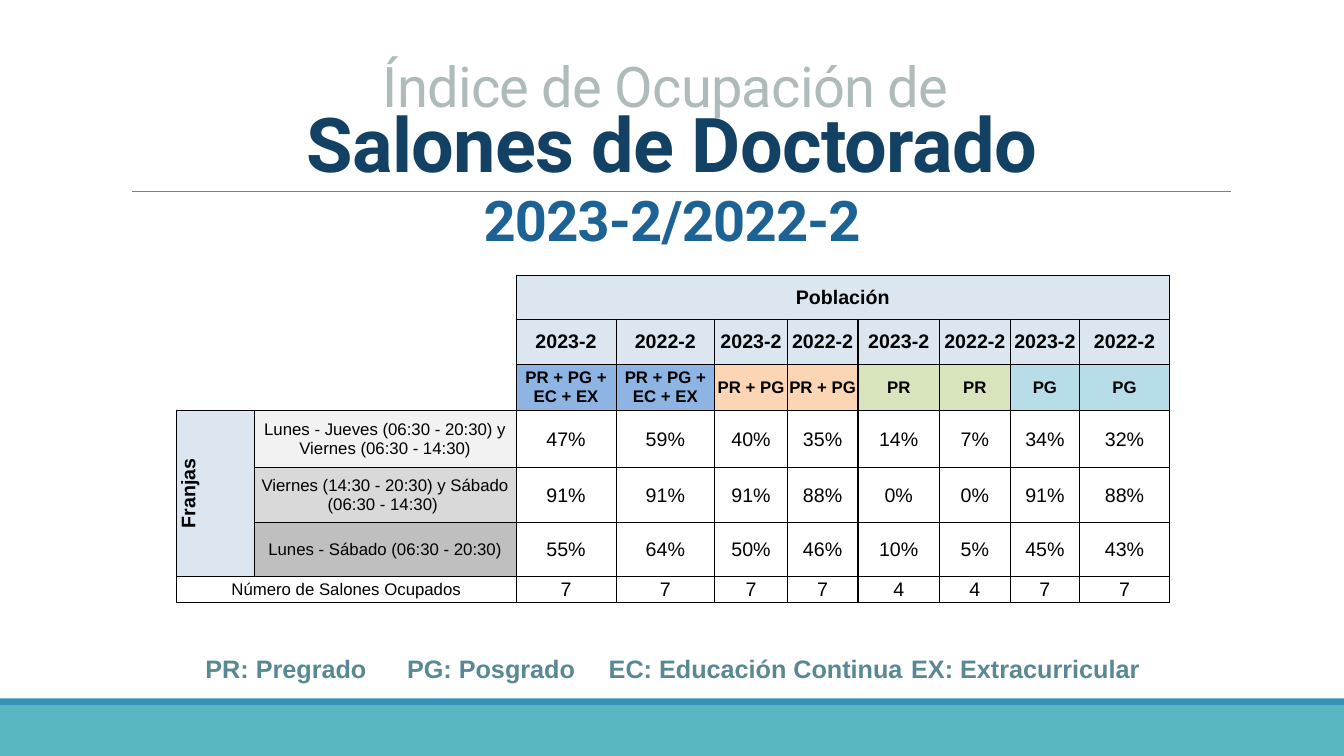
import typing

import lxml.etree
import pptx
import pptx.dml.color
import pptx.enum.shapes
import pptx.enum.text
import pptx.oxml.ns
import pptx.slide
import pptx.table
import pptx.text.text
import pptx.util

Inches = pptx.util.Inches
Pt = pptx.util.Pt
qn = pptx.oxml.ns.qn
Anchor = pptx.enum.text.MSO_ANCHOR
PALE = "DCE6F1"
WHITE = "FFFFFF"


class Column(typing.NamedTuple):
    width: float
    year: str
    group: str
    fill: str
    rates: tuple[int, int, int]
    rooms: int


class Slot(typing.NamedTuple):
    label: str
    fill: str


class Band(typing.NamedTuple):
    top: float
    height: float
    fill: str


BANDS = [Band(7, 0.5, "58B6C0"), Band(6.93, 0.07, "3494BA")]
COLUMNS = [
    Column(0.99, "2023-2", "PR + PG + EC + EX", "8DB4E2", (47, 91, 55), 7),
    Column(0.98, "2022-2", "PR + PG + EC + EX", "8DB4E2", (59, 91, 64), 7),
    Column(0.72, "2023-2", "PR + PG", "FCD5B4", (40, 91, 50), 7),
    Column(0.7, "2022-2", "PR + PG", "FCD5B4", (35, 88, 46), 7),
    Column(0.81, "2023-2", "PR", "D8E4BC", (14, 0, 10), 4),
    Column(0.7, "2022-2", "PR", "D8E4BC", (7, 0, 5), 4),
    Column(0.69, "2023-2", "PG", "B7DEE8", (34, 91, 45), 7),
    Column(0.89, "2022-2", "PG", "B7DEE8", (32, 88, 43), 7),
]
SLOTS = [
    Slot("Lunes - Jueves (06:30 - 20:30) y Viernes (06:30 - 14:30)", "F2F2F2"),
    Slot("Viernes (14:30 - 20:30) y Sábado (06:30 - 14:30) ", "D9D9D9"),
    Slot("Lunes - Sábado (06:30 - 20:30)", "BFBFBF"),
]
WIDTHS = [0.77, 2.6] + [col.width for col in COLUMNS]
HEIGHTS = [0.44, 0.44, 0.46, 0.57, 0.54, 0.54, 0.26]


def color(code: str) -> pptx.dml.color.RGBColor:
    return pptx.dml.color.RGBColor.from_string(code)


def write(frame: pptx.text.text.TextFrame, text: str, *, size: float = 14, font: str = "Arial",
          ink: str = "000000", bold: bool = False, gap: float = 0, line: float = 1) -> None:
    par = frame.paragraphs[0]
    if par.runs:
        par = frame.add_paragraph()
    par.alignment = pptx.enum.text.PP_ALIGN.CENTER
    par.line_spacing = line
    run = par.add_run()
    run.text = text
    run.font.size = Pt(size)
    run.font.name = font
    run.font.bold = bold
    run.font.color.rgb = color(ink)
    if gap:
        run.font._element.set("spc", str(round(gap * 100)))


def add_text(slide: pptx.slide.Slide, left: float, top: float, width: float,
             height: float) -> pptx.text.text.TextFrame:
    box = slide.shapes.add_textbox(Inches(left), Inches(top), Inches(width), Inches(height))
    box.text_frame.word_wrap = True
    return box.text_frame


def add_band(slide: pptx.slide.Slide, band: Band) -> None:
    shape = slide.shapes.add_shape(pptx.enum.shapes.MSO_SHAPE.RECTANGLE, 0, Inches(band.top),
                                   Inches(13.33), Inches(band.height))
    shape.shadow.inherit = False
    shape.fill.solid()
    shape.fill.fore_color.rgb = color(band.fill)
    shape.line.fill.background()


def add_rule(slide: pptx.slide.Slide) -> None:
    rule = slide.shapes.add_connector(pptx.enum.shapes.MSO_CONNECTOR.STRAIGHT, Inches(1.31),
                                      Inches(1.9), Inches(12.21), Inches(1.9))
    rule.line.color.rgb = color("808080")
    rule.line.width = Pt(0.5)
    lxml.etree.SubElement(rule._element.spPr, qn("a:effectLst"))


def edges(row: int, col: int, last: int) -> dict[str, float]:
    if row < 3 and col < 2:
        return {"L": 0, "R": col, "T": 0, "B": row == 2}
    return {
        "L": 0.5 if col % 2 else 1,
        "R": 1 if last % 2 else 0.5,
        "T": 1 if row < 2 or (row == 3 and col < 2) else 0.5,
        "B": 1 if row in (0, 6) else 0.5,
    }


def border(cell: pptx.table._Cell, sides: dict[str, float]) -> None:
    props = cell._tc.get_or_add_tcPr()
    for side, width in sides.items():
        line = lxml.etree.SubElement(props, qn(f"a:ln{side}"), w=str(Pt(width)))
        if width:
            fill = lxml.etree.SubElement(line, qn("a:solidFill"))
            lxml.etree.SubElement(fill, qn("a:srgbClr"), val="000000")
        else:
            lxml.etree.SubElement(line, qn("a:noFill"))


def put(grid: pptx.table.Table, row: int, col: int, text: str = "", fill: str = WHITE,
        **style: typing.Any) -> None:
    cell = grid.cell(row, col)
    cell.margin_left = cell.margin_right = cell.margin_top = Inches(0.01)
    cell.margin_bottom = 0
    cell.vertical_anchor = Anchor.MIDDLE
    border(cell, edges(row, col, col + cell.span_width - 1))
    cell.fill.solid()
    cell.fill.fore_color.rgb = color(fill)
    if text:
        write(cell.text_frame, text, **style)


def add_grid(slide: pptx.slide.Slide) -> None:
    frame = slide.shapes.add_table(len(HEIGHTS), len(WIDTHS), Inches(1.75), Inches(2.73),
                                   Inches(sum(WIDTHS)), Inches(sum(HEIGHTS)))
    grid = frame.table
    grid.first_row = grid.horz_banding = False
    for col, width in zip(grid.columns, WIDTHS):
        col.width = Inches(width)
    for row, height in zip(grid.rows, HEIGHTS):
        row.height = Inches(height)
    grid.cell(0, 2).merge(grid.cell(0, 9))
    grid.cell(3, 0).merge(grid.cell(5, 0))
    grid.cell(6, 0).merge(grid.cell(6, 1))

    for row in range(3):
        for col in range(2):
            put(grid, row, col)
    put(grid, 0, 2, "Población", PALE, bold=True)
    for col in range(3, 10):
        put(grid, 0, col, fill=PALE)
    put(grid, 3, 0, "Franjas", PALE, bold=True)
    grid.cell(3, 0)._tc.tcPr.set("vert", "vert270")
    for row in (4, 5):
        put(grid, row, 0, fill=PALE)
    for row, slot in enumerate(SLOTS, 3):
        put(grid, row, 1, slot.label, slot.fill, size=12)
    put(grid, 6, 0, "Número de Salones Ocupados", size=12)
    put(grid, 6, 1)
    for num, col in enumerate(COLUMNS, 2):
        put(grid, 1, num, col.year, PALE, bold=True)
        put(grid, 2, num, col.group, col.fill, size=12, bold=True)
        for row, rate in enumerate(col.rates, 3):
            put(grid, row, num, f"{rate}%")
        put(grid, 6, num, str(col.rooms))


def main() -> None:
    deck = pptx.Presentation()
    deck.slide_width = Inches(13.33)
    deck.slide_height = Inches(7.5)
    slide = deck.slides.add_slide(deck.slide_layouts[6])
    for band in BANDS:
        add_band(slide, band)
    add_rule(slide)
    key = add_text(slide, 1.42, 6.43, 10.5, 0.4)
    write(key, "PR: Pregrado\tPG: Posgrado\tEC: Educación Continua\tEX: Extracurricular",
          size=18, ink="588894", bold=True)
    add_grid(slide)
    title = add_text(slide, 0, 0.51, 13.33, 2.05)
    title.vertical_anchor = Anchor.BOTTOM
    write(title, "Índice de Ocupación de ", size=40, font="Roboto", ink="AFBABB",
          gap=-0.5, line=0.75)
    write(title, "Salones de Doctorado", size=54, font="Roboto", ink="134163",
          bold=True, gap=-0.5, line=0.75)
    write(title, "2023-2/2022-2", size=40, font="Roboto", ink="1D6294", bold=True, gap=-0.5)
    deck.save("out.pptx")


if __name__ == "__main__":
    main()
